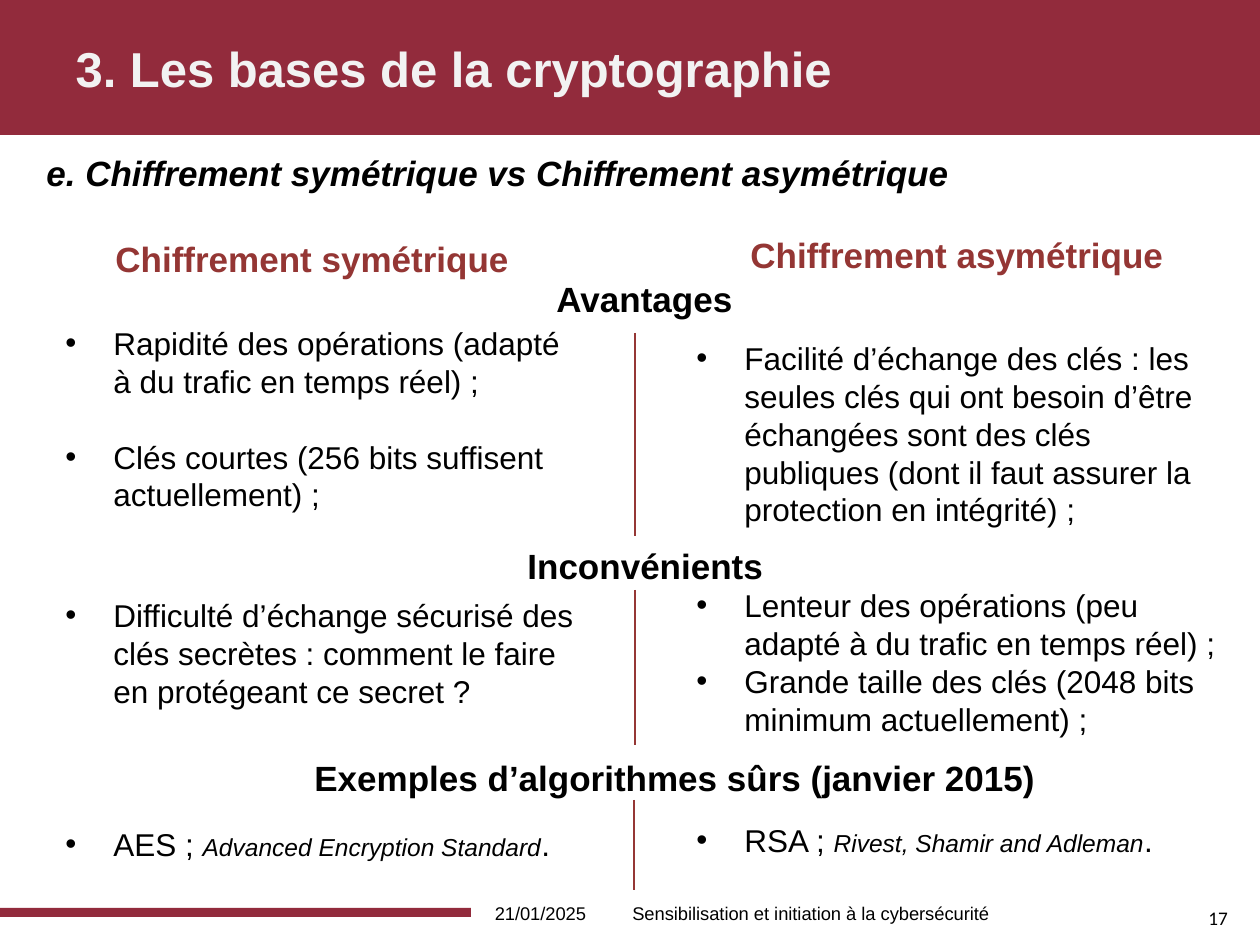
from typing import NamedTuple

from lxml.etree import SubElement
from pptx import Presentation
from pptx.dml.color import RGBColor
from pptx.enum.shapes import MSO_CONNECTOR as Connector, MSO_SHAPE as Shape
from pptx.enum.text import MSO_ANCHOR as Anchor, PP_ALIGN as Align
from pptx.oxml.ns import qn
from pptx.util import Pt

PX = 914400 / 126
BURGUNDY, BRICK, RULE = "922B3C", "943634", "953735"
BLACK, PALE = "000000", "F2F2F2"
INDENT = 48


class Run(NamedTuple):
    text: str
    size: float = 18
    italic: bool = False


class Heading(NamedTuple):
    text: str
    box: tuple[int, int, int, int]
    color: str = BLACK


class Points(NamedTuple):
    items: list[list[Run]]
    box: tuple[int, int, int, int]
    gap: float = 0


def emu(px: int) -> int:
    """Turn pixels into EMU."""
    return round(px * PX)


def rgb(color: str) -> RGBColor:
    """Turn a hex string into a colour."""
    return RGBColor.from_string(color)


def style(font, size=18, color=BLACK, bold=False, italic=False, name="Arial") -> None:
    """Format a font."""
    font.size, font.bold, font.italic, font.name = Pt(size), bold, italic, name
    font.color.rgb = rgb(color)


def add_text(slide, text: str, box, anchor=Anchor.TOP, align=Align.LEFT, wrap=True, **font):
    """Add a one-paragraph text box."""
    frame = slide.shapes.add_textbox(*map(emu, box)).text_frame
    frame.word_wrap, frame.vertical_anchor = wrap, anchor
    paragraph = frame.paragraphs[0]
    paragraph.alignment = align
    run = paragraph.add_run()
    run.text = text
    style(run.font, **font)


def add_points(slide, points: Points) -> None:
    """Add a bulleted list."""
    frame = slide.shapes.add_textbox(*map(emu, points.box)).text_frame
    frame.word_wrap = True
    for index, item in enumerate(points.items):
        paragraph = frame.add_paragraph() if index else frame.paragraphs[0]
        props = paragraph._p.get_or_add_pPr()
        props.set("marL", str(emu(INDENT)))
        props.set("indent", str(-emu(INDENT)))
        if index and points.gap:
            paragraph.space_before = Pt(points.gap)
        SubElement(props, qn("a:buFont"), typeface="Arial")
        SubElement(props, qn("a:buChar"), char="•")
        for part in item:
            run = paragraph.add_run()
            run.text = part.text
            style(run.font, size=part.size, italic=part.italic)


def add_band(slide, box) -> None:
    """Add a plain burgundy band."""
    band = slide.shapes.add_shape(Shape.RECTANGLE, *map(emu, box))
    band.shadow.inherit = False
    band.fill.solid()
    band.fill.fore_color.rgb = rgb(BURGUNDY)
    band.line.fill.background()


def add_divider(slide, x: int, top: int, bottom: int) -> None:
    """Add a vertical rule between the two columns."""
    rule = slide.shapes.add_connector(Connector.STRAIGHT, *map(emu, (x, top, x, bottom)))
    rule.line.color.rgb = rgb(RULE)
    rule.line.width = Pt(0.75)
    SubElement(rule._element.spPr, qn("a:effectLst"))


def set_title(slide, text: str) -> None:
    """Place and format the title."""
    title = slide.shapes.title
    title.left, title.top, title.width, title.height = map(emu, (63, 1, 1134, 134))
    title.text_frame.text = text
    title.text_frame.vertical_anchor = Anchor.MIDDLE
    paragraph = title.text_frame.paragraphs[0]
    paragraph.alignment = Align.LEFT
    style(paragraph.runs[0].font, size=28, color=PALE, bold=True)


HEADINGS = [
    Heading("Chiffrement symétrique", (103, 231, 432, 55), BRICK),
    Heading("Chiffrement asymétrique", (738, 227, 452, 55), BRICK),
    Heading("Avantages", (544, 271, 208, 55)),
    Heading("Inconvénients", (515, 538, 270, 55)),
    Heading("Exemples d’algorithmes sûrs (janvier 2015)", (302, 750, 771, 55)),
]
LEFT, RIGHT = 53, 684
POINTS = [
    Points([[Run("Rapidité des opérations (adapté à du trafic en temps réel) ;")],
            [Run("Clés courtes (256 bits suffisent actuellement) ;")]],
           (LEFT, 318, 541, 204), gap=21.6),
    Points([[Run("Facilité d’échange des clés : les seules clés qui ont besoin d’être échangées "
                 "sont des clés publiques (dont il faut assurer la protection en intégrité) ;")]],
           (RIGHT, 333, 551, 204)),
    Points([[Run("Difficulté d’échange sécurisé des clés secrètes : comment le faire "
                 "en protégeant ce secret ?")]],
           (LEFT, 590, 541, 127)),
    Points([[Run("Lenteur des opérations (peu adapté à du trafic en temps réel) ;")],
            [Run("Grande taille des clés (2048 bits minimum actuellement) ;")]],
           (RIGHT, 580, 552, 165)),
    Points([[Run("AES ; "), Run("Advanced Encryption Standard", 14, True), Run(".")]],
           (LEFT, 819, 541, 50)),
    Points([[Run("RSA ; "), Run("Rivest, Shamir and Adleman", 14, True), Run(".")]],
           (RIGHT, 815, 541, 50)),
]
DIVIDERS = [(635, 333, 536), (635, 590, 745), (634, 800, 890)]


def main() -> None:
    """Build the slide and save it."""
    deck = Presentation()
    deck.slide_width, deck.slide_height = emu(1260), emu(945)
    slide = deck.slides.add_slide(deck.slide_layouts[5])
    add_band(slide, (0, 0, 1260, 135))
    add_band(slide, (0, 908, 471, 9))
    set_title(slide, "3. Les bases de la cryptographie")
    title = slide.shapes.title._element
    title.getparent().append(title)

    add_text(slide, "17", (1196, 900, 58, 37), wrap=False, size=11, name="Calibri")
    add_text(slide, "21/01/2025", (471, 888, 139, 50), Anchor.MIDDLE, Align.CENTER, size=10.5)
    add_text(slide, "Sensibilisation et initiation à la cybersécurité", (620, 888, 418, 50),
             Anchor.MIDDLE, size=10.5)
    add_text(slide, "e. Chiffrement symétrique vs Chiffrement asymétrique", (34, 145, 1201, 79),
             size=20, bold=True, italic=True)
    for heading in HEADINGS:
        add_text(slide, heading.text, heading.box, wrap=False, size=20, bold=True,
                 color=heading.color)
    for points in POINTS:
        add_points(slide, points)
    for divider in DIVIDERS:
        add_divider(slide, *divider)
    deck.save("out.pptx")


if __name__ == "__main__":
    main()
